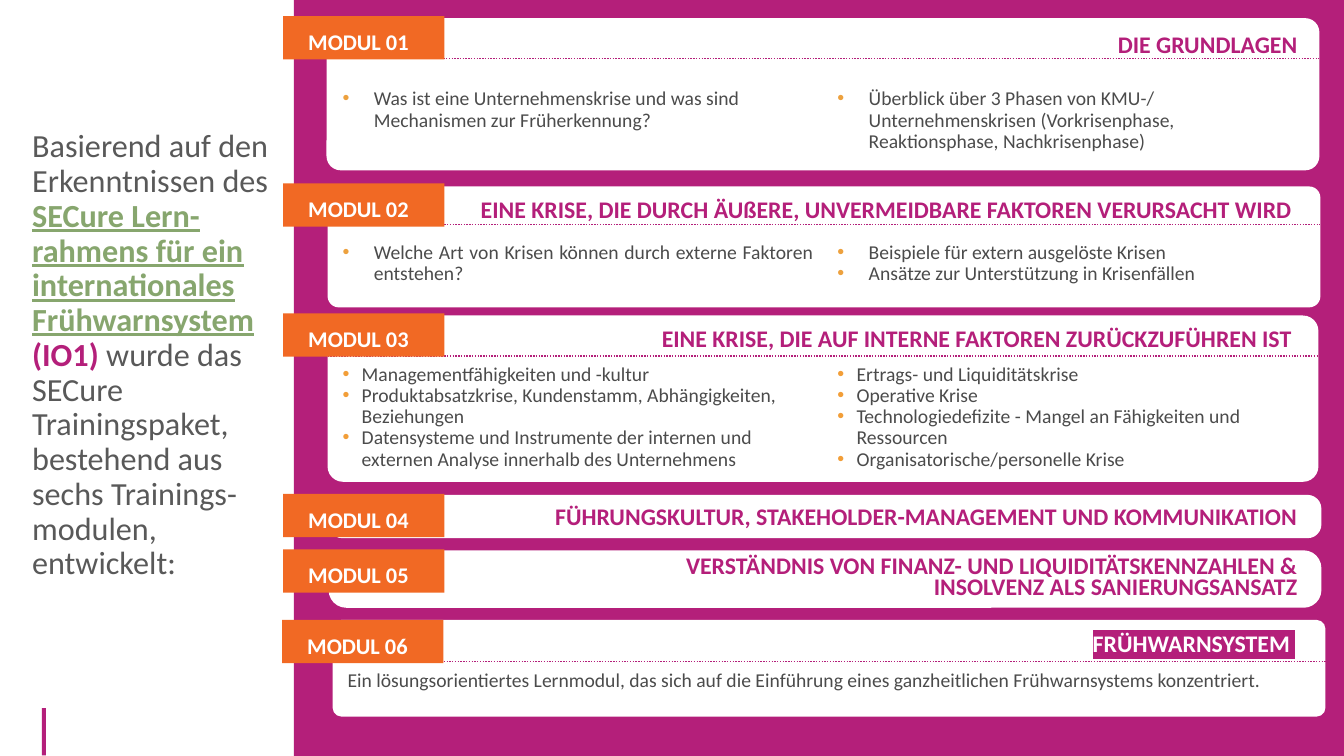
import pptx
import pptx.dml.color
import pptx.enum.dml
import pptx.enum.shapes
import pptx.enum.text
import pptx.oxml.ns
import pptx.util
from dataclasses import dataclass
from lxml import etree

RGBColor = pptx.dml.color.RGBColor
Align = pptx.enum.text.PP_ALIGN
Preset = pptx.enum.shapes.MSO_SHAPE
qn = pptx.oxml.ns.qn

MAGENTA = RGBColor(0xB4, 0x1F, 0x7A)
ORANGE = RGBColor(0xF1, 0x69, 0x24)
AMBER = RGBColor(0xED, 0xA1, 0x3E)
LIGHT_AMBER = RGBColor(0xF2, 0x9E, 0x38)
GREEN = RGBColor(0x87, 0xA6, 0x6E)
GREY = RGBColor(0x59, 0x59, 0x59)
DARK_GREY = RGBColor(0x4B, 0x4B, 0x4B)
WHITE = RGBColor(0xFF, 0xFF, 0xFF)

FONT = "Calibri"
SLIDE_WIDTH, SLIDE_HEIGHT = pptx.util.Inches(13.333), pptx.util.Inches(7.5)
COLUMNS, ROWS = 40, 30
TAG_WIDTH, TAG_HEIGHT = 4.8, 1.72
BODY_WIDTH, BODY_STEP = 14.61, 14.73


@dataclass
class Module:
    """One training module; lengths are grid columns and rows."""
    title: str
    left: float
    top: float
    height: float
    tag_top: float
    title_top: float
    width: float = 29.55
    corner: float = 0.093
    tag_left: float = 8.43
    title_left: float = 13.65
    title_right: float = 38.91
    title_spacing: float = 1.0
    title_highlighted: bool = False
    rule: float = None
    body_left: float = 9.9
    body_top: float = 0
    body_width: float = BODY_WIDTH
    body: tuple = ()
    body_align: int = Align.LEFT
    bullet: RGBColor = AMBER
    hanging: float = 0.31


MODULES = [
    Module("DIE GRUNDLAGEN", 9.72, 0.72, 6.04, 0.64, 1, rule=2.32, body_top=3.32, body=(
        ["Was ist eine Unternehmenskrise und was sind Mechanismen zur Früherkennung?"],
        ["Überblick über 3 Phasen von KMU-/ Unternehmenskrisen "
         "(Vorkrisenphase, Reaktionsphase, Nachkrisenphase)"])),
    Module("EINE KRISE, DIE DURCH ÄUßERE, UNVERMEIDBARE FAKTOREN VERURSACHT WIRD ",
           9.75, 7.4, 4.8, 7.28, 7.52, rule=8.92, body_top=9.4,
           body_align=Align.JUSTIFY, body=(
               ["Welche Art von Krisen können durch externe Faktoren entstehen?"],
               ["Beispiele für extern ausgelöste Krisen",
                "Ansätze zur Unterstützung in Krisenfällen"])),
    Module("EINE KRISE, DIE AUF INTERNE FAKTOREN ZURÜCKZUFÜHREN IST ",
           9.75, 12.52, 6.6, 12.44, 12.64, width=29.49, rule=14.12, body_top=14.24,
           bullet=LIGHT_AMBER, hanging=0.19, body=(
               ["Managementfähigkeiten und -kultur",
                "Produktabsatzkrise, Kundenstamm, Abhängigkeiten, Beziehungen",
                "Datensysteme und Instrumente der internen und externen Analyse "
                "innerhalb des Unternehmens"],
               ["Ertrags- und Liquiditätskrise",
                "Operative Krise",
                "Technologiedefizite - Mangel an Fähigkeiten und Ressourcen",
                "Organisatorische/personelle Krise"])),
    Module("FÜHRUNGSKULTUR, STAKEHOLDER-MANAGEMENT UND KOMMUNIKATION",
           9.78, 19.64, 1.72, 19.6, 19.72, corner=0.319),
    Module("VERSTÄNDNIS VON FINANZ- UND LIQUIDITÄTSKENNZAHLEN & "
           "INSOLVENZ ALS SANIERUNGSANSATZ",
           9.78, 21.84, 2.28, 21.8, 21.92, corner=0.309, title_left=18.9,
           title_spacing=pptx.util.Pt(15.4)),
    Module("FRÜHWARNSYSTEM ", 9.9, 24.6, 3.84, 24.6, 24.76, tag_left=8.4,
           title_right=38.85, title_highlighted=True, rule=26.24,
           body_left=10.05, body_top=26.4, body_width=29.16,
           body_align=Align.JUSTIFY, bullet=None, hanging=0, body=(
               ["Ein lösungsorientiertes Lernmodul, das sich auf die Einführung eines "
                "ganzheitlichen Frühwarnsystems konzentriert. "],)),
]


def across(columns):
    return round(SLIDE_WIDTH * columns / COLUMNS)


def down(rows):
    return round(SLIDE_HEIGHT * rows / ROWS)


def add_panel(slide, left, top, width, height, fill, corner=None):
    """Add a filled rectangle, rounded when a corner ratio is given."""
    preset = Preset.RECTANGLE if corner is None else Preset.ROUNDED_RECTANGLE
    panel = slide.shapes.add_shape(
        preset, across(left), down(top), across(width), down(height))
    if corner is not None:
        panel.adjustments[0] = corner
    panel.shadow.inherit = False
    panel.fill.solid()
    panel.fill.fore_color.rgb = fill
    panel.line.fill.background()
    return panel


def add_text_area(slide, left, top, width, height):
    area = slide.shapes.add_textbox(
        across(left), down(top), across(width), down(height))
    area.text_frame.word_wrap = True
    return area.text_frame


def add_dotted_rule(slide, left, right, row):
    rule = slide.shapes.add_connector(
        pptx.enum.shapes.MSO_CONNECTOR.STRAIGHT,
        across(left), down(row), across(right), down(row))
    rule.line.color.rgb = MAGENTA
    rule.line.width = pptx.util.Pt(1)
    rule.line.dash_style = pptx.enum.dml.MSO_LINE.ROUND_DOT
    etree.SubElement(rule._element.spPr, qn("a:effectLst"))


def write(frame, text, *, size, color, bold=False, underline=False, highlight=None,
          align=Align.LEFT, spacing=1.0, indent=0, hanging=0, bullet=None,
          continues=False):
    """Append text as a new paragraph, or to the last one if it continues."""
    paragraph = frame.paragraphs[-1]
    if not continues:
        if paragraph.runs:
            paragraph = frame.add_paragraph()
        paragraph.alignment = align
        paragraph.line_spacing = spacing
        properties = paragraph._p.get_or_add_pPr()
        properties.set("marL", str(pptx.util.Inches(indent + hanging)))
        properties.set("indent", str(-pptx.util.Inches(hanging)))
        if bullet is not None:
            bullet_color = etree.SubElement(properties, qn("a:buClr"))
            etree.SubElement(bullet_color, qn("a:srgbClr"), val=str(bullet))
            etree.SubElement(properties, qn("a:buFont"), typeface="Arial")
            etree.SubElement(properties, qn("a:buChar"), char="•")
    run = paragraph.add_run()
    run.text = text
    run.font.name, run.font.size = FONT, pptx.util.Pt(size)
    run.font.bold, run.font.underline = bold, underline
    run.font.color.rgb = color
    if highlight is not None:
        marker = etree.Element(qn("a:highlight"))
        etree.SubElement(marker, qn("a:srgbClr"), val=str(highlight))
        run._r.rPr.find(qn("a:solidFill")).addnext(marker)


def add_introduction(slide):
    intro = add_text_area(slide, 0.66, 4.96, 7.74, 19.64)
    write(intro, "Basierend auf den Erkenntnissen des ", size=23, color=GREY, spacing=0.9)
    write(intro, "SECure Lern-rahmens für ein internationales Frühwarnsystem ",
          size=23, color=GREEN, bold=True, underline=True, continues=True)
    write(intro, "(IO1) ", size=23, color=MAGENTA, bold=True, continues=True)
    write(intro, "wurde das SECure Trainingspaket, bestehend aus sechs "
          "Trainings-modulen, entwickelt:", size=23, color=GREY, continues=True)


def add_module(slide, number, module):
    add_panel(slide, module.left, module.top, module.width, module.height, WHITE,
              module.corner)
    if module.rule is not None:
        add_dotted_rule(slide, module.left, module.left + module.width, module.rule)
    for position, points in enumerate(module.body):
        body = add_text_area(slide, module.body_left + position * BODY_STEP,
                             module.body_top, module.body_width,
                             module.top + module.height - module.body_top)
        for point in points:
            write(body, point, size=14, color=DARK_GREY, align=module.body_align,
                  spacing=pptx.util.Pt(15.2), hanging=module.hanging,
                  bullet=module.bullet)
    title = add_text_area(slide, module.title_left, module.title_top,
                          module.title_right - module.title_left, 1.56)
    write(title, module.title, size=17, bold=True, align=Align.RIGHT,
          color=WHITE if module.title_highlighted else MAGENTA,
          highlight=MAGENTA if module.title_highlighted else None,
          spacing=module.title_spacing)
    tag = add_panel(slide, module.tag_left, module.tag_top, TAG_WIDTH, TAG_HEIGHT, ORANGE)
    tag.text_frame.vertical_anchor = pptx.enum.text.MSO_ANCHOR.MIDDLE
    write(tag.text_frame, f"MODUL {number:02}", size=16, color=WHITE, bold=True,
          spacing=pptx.util.Pt(24.4), indent=0.15)


def main():
    deck = pptx.Presentation()
    deck.slide_width, deck.slide_height = SLIDE_WIDTH, SLIDE_HEIGHT
    slide = deck.slides.add_slide(deck.slide_layouts[6])
    add_panel(slide, 1.25, 28.1, 0.12, 1.88, MAGENTA)
    add_panel(slide, 8.75, 0, 31.25, ROWS, MAGENTA)
    add_introduction(slide)
    for number, module in enumerate(MODULES, start=1):
        add_module(slide, number, module)
    deck.save("out.pptx")


if __name__ == "__main__":
    main()
